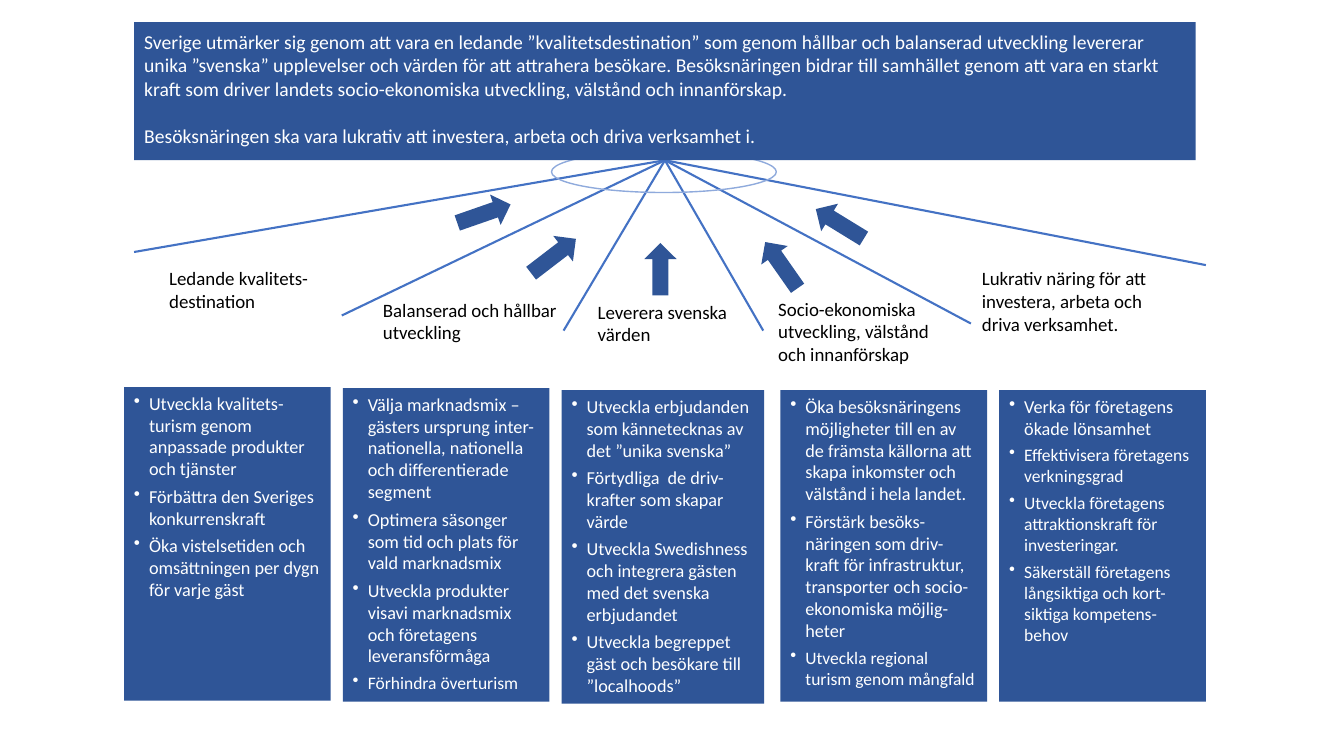
from lxml import etree
from pptx import Presentation
from pptx import util as u
from pptx.dml.color import RGBColor
from pptx.enum import shapes, text
from pptx.oxml import ns

PX = 9144  # 100 px to the inch
NAVY = RGBColor(0x2F, 0x55, 0x97)
BLUE = RGBColor(0x44, 0x72, 0xC4)
PALE = RGBColor(0x8F, 0xAA, 0xDC)
WHITE = RGBColor(0xFF, 0xFF, 0xFF)
BLACK = RGBColor(0, 0, 0)

VISION = [
    "Sverige utmärker sig genom att vara en ledande ”kvalitetsdestination” som genom "
    "hållbar och balanserad utveckling levererar unika ”svenska” upplevelser och värden "
    "för att attrahera besökare. Besöksnäringen bidrar till samhället genom att vara en "
    "starkt kraft som driver landets socio-ekonomiska utveckling, välstånd och "
    "innanförskap.",
    "Besöksnäringen ska vara lukrativ att investera, arbeta och driva verksamhet i.",
]
# end of each ray: x, y
RAYS = [(963, 321), (757, 328), (559, 328), (339, 313), (133, 250), (1196, 263)]
# left, top, width, turn in degrees
ARROWS = [
    (452, 196, 56, 340.8), (521, 238, 56, 322.5), (629, 251, 52, 270),
    (747, 247, 56, 235), (805, 206, 56, 211.5),
]
# left, top, width, height, text
LABELS = [
    (158, 260, 205, 58, "Ledande kvalitets-destination"),
    (370, 291, 205, 58, "Balanserad och hållbar utveckling"),
    (583, 293, 205, 58, "Leverera svenska\nvärden"),
    (762, 290, 201, 81, "Socio-ekonomiska\nutveckling, välstånd\noch innanförskap"),
    (964, 260, 218, 81, "Lukrativ näring för att\ninvestera, arbeta och\ndriva verksamhet."),
]
# top, width, height, items at 13 pt, items at 12.5 pt
GOALS = [
    (384, 205, 311, [
        "Utveckla kvalitets-turism genom anpassade produkter och tjänster",
        "Förbättra den Sveriges konkurrenskraft",
        "Öka vistelsetiden och omsättningen per dygn för varje gäst"], []),
    (385, 205, 311, [
        "Välja marknadsmix – gästers ursprung inter-nationella, nationella och "
        "differentierade segment",
        "Optimera säsonger som tid och plats för vald marknadsmix",
        "Utveckla produkter visavi marknadsmix och företagens leveransförmåga"],
        ["Förhindra överturism"]),
    (387, 201, 311, [
        "Utveckla erbjudanden som kännetecknas av det ”unika svenska”",
        "Förtydliga  de driv-krafter som skapar värde",
        "Utveckla Swedishness och integrera gästen med det svenska erbjudandet",
        "Utveckla begreppet gäst och besökare till ”localhoods”"], []),
    (387, 205, 309, [
        "Öka besöksnäringens möjligheter till en av de främsta källorna att skapa "
        "inkomster och välstånd i hela landet.",
        "Förstärk besöks-näringen som driv-kraft för infrastruktur, transporter och "
        "socio-ekonomiska möjlig-heter"],
        ["Utveckla regional turism genom mångfald"]),
    (387, 205, 309, ["Verka för företagens ökade lönsamhet"], [
        "Effektivisera företagens verkningsgrad",
        "Utveckla företagens attraktionskraft för investeringar.",
        "Säkerställ företagens långsiktiga och kort-siktiga kompetens-behov"]),
]


def scale(*vals):
    return [v * PX for v in vals]


def style(para, size, color):
    para.alignment = text.PP_ALIGN.LEFT
    para.font.name = "Calibri"
    para.font.size = u.Pt(size)
    para.font.color.rgb = color


def block(slide, kind, box):
    """Add a plain navy shape with neither outline nor shadow."""
    shape = slide.shapes.add_shape(kind, *scale(*box))
    shape.shadow.inherit = False
    shape.fill.solid()
    shape.fill.fore_color.rgb = NAVY
    shape.line.fill.background()
    return shape


def banner(slide, box):
    title = slide.shapes.title
    title.left, title.top, title.width, title.height = scale(*box)
    title.fill.solid()
    title.fill.fore_color.rgb = NAVY
    frame = title.text_frame
    frame.text = "\n".join(VISION)
    frame.word_wrap = True
    frame.auto_size = text.MSO_AUTO_SIZE.NONE
    frame.vertical_anchor = text.MSO_ANCHOR.MIDDLE
    frame.margin_bottom = 10 * PX
    for para in frame.paragraphs:
        style(para, 14, WHITE)
    frame.paragraphs[-1].space_before = u.Pt(17)
    return title


def fan(slide, top):
    """Spread rays from the foot of the banner, with a ring tucked behind it."""
    mid, foot = top.left + top.width // 2, top.top + top.height
    for x, y in RAYS:
        ray = slide.shapes.add_connector(
            shapes.MSO_CONNECTOR.STRAIGHT, mid, foot, *scale(x, y))
        ray.begin_connect(top, 2)
        ray.line.color.rgb = BLUE
        ray.line.width = u.Pt(1.5)
        etree.SubElement(ray._element.spPr, ns.qn("a:effectLst"))
    ring = block(slide, shapes.MSO_SHAPE.OVAL, (547, 150, 223, 41))
    ring.fill.background()
    ring.line.color.rgb = PALE
    ring.line.width = u.Pt(1)
    slide.shapes._spTree.append(top._element)


def arrow(slide, left, top, width, turn):
    block(slide, shapes.MSO_SHAPE.RIGHT_ARROW, (left, top, width, 32)).rotation = turn


def label(slide, box, words):
    frame = slide.shapes.add_textbox(*scale(*box)).text_frame
    frame.word_wrap = True
    frame.text = words
    for para in frame.paragraphs:
        style(para, 13.5, BLACK)


def bullet(para):
    props = para._p.get_or_add_pPr()
    props.set("marL", str(15 * PX))
    props.set("indent", str(-15 * PX))
    etree.SubElement(props, ns.qn("a:buChar")).set("char", "•")
    para.space_before = u.Pt(1)
    para.space_after = u.Pt(3)


def column(slide, box, large, small):
    frame = block(slide, shapes.MSO_SHAPE.RECTANGLE, box).text_frame
    frame.word_wrap = True
    frame.vertical_anchor = text.MSO_ANCHOR.TOP
    frame.text = "\n".join(large + small)
    for i, para in enumerate(frame.paragraphs):
        bullet(para)
        style(para, 13 if i < len(large) else 12.5, WHITE)


def main():
    deck = Presentation()
    deck.slide_width, deck.slide_height = scale(1333, 750)
    slide = deck.slides.add_slide(deck.slide_layouts.get_by_name("Title Only"))
    fan(slide, banner(slide, (133, 22, 1053, 137)))
    for spot in ARROWS:
        arrow(slide, *spot)
    for *box, words in LABELS:
        label(slide, box, words)
    for i, (top, width, height, large, small) in enumerate(GOALS):
        column(slide, (123 + 217 * i, top, width, height), large, small)
    deck.save("out.pptx")


if __name__ == "__main__":
    main()
